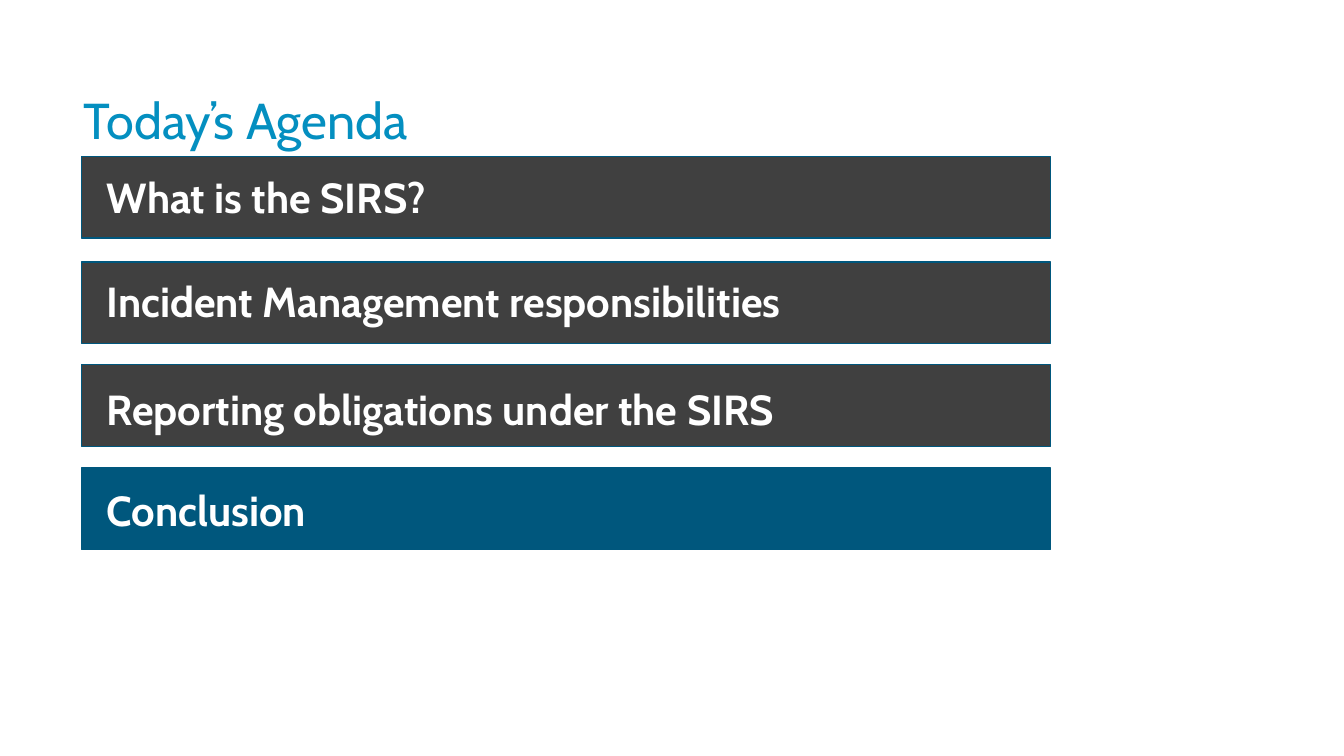
from pptx import Presentation
from pptx.dml.color import RGBColor
from pptx.enum.shapes import MSO_SHAPE
from pptx.enum.text import MSO_ANCHOR, MSO_AUTO_SIZE
from pptx.util import Cm, Pt

RECT = MSO_SHAPE.RECTANGLE
TOP, BOTTOM = MSO_ANCHOR.TOP, MSO_ANCHOR.BOTTOM
GROW = MSO_AUTO_SIZE.SHAPE_TO_FIT_TEXT

SKY = RGBColor(0x04, 0x8F, 0xC0)
NAVY = RGBColor(0x00, 0x57, 0x7D)
GRAY = RGBColor(0x40, 0x40, 0x40)
WHITE = RGBColor(0xFF, 0xFF, 0xFF)
FONT = "Cabin"

# Content: label, bar top and label top in cm, bar fill
TITLE = "Today’s Agenda"
AGENDA = [
    ("What is the SIRS?", 3.94, 4.19, GRAY),
    ("Incident Management responsibilities", 6.6, 6.83, GRAY),
    ("Reporting obligations under the SIRS", 9.19, 9.53, GRAY),
    ("Conclusion", 11.79, 12.09, NAVY),
]
BAR_X, BAR_W, BAR_H = 2.06, 24.41, 2.06
LABEL_X, LABEL_H = 2.44, 1.55

deck = Presentation()
deck.slide_width, deck.slide_height = Cm(33.87), Cm(19.05)
slide = deck.slides.add_slide(deck.slide_layouts[6])


def add_text(text, x, y, w, h, size, color, bold=False, anchor=TOP):
    box = slide.shapes.add_textbox(Cm(x), Cm(y), Cm(w), Cm(h))
    frame = box.text_frame
    frame.word_wrap = True
    frame.vertical_anchor = anchor
    line = frame.paragraphs[0]
    line.text = text
    font = line.font
    font.name, font.size, font.bold = FONT, Pt(size), bold
    font.color.rgb = color
    return frame


def add_bar(y, fill):
    bar = slide.shapes.add_shape(RECT, Cm(BAR_X), Cm(y), Cm(BAR_W), Cm(BAR_H))
    bar.shadow.inherit = False
    bar.fill.solid()
    bar.fill.fore_color.rgb = fill
    bar.line.color.rgb = NAVY
    bar.line.width = Pt(1)


# Title
head = add_text(TITLE, 2.11, 2.29, 26.9, 1.5, 36, SKY, anchor=BOTTOM)
head.margin_left = head.margin_right = head.margin_top = head.margin_bottom = 0
head.paragraphs[0].line_spacing = 0.9

# Agenda bars with their labels
for label, bar_y, label_y, fill in AGENDA:
    add_bar(bar_y, fill)
    frame = add_text(label, LABEL_X, label_y, BAR_W, LABEL_H, 30, WHITE, bold=True)
    frame.auto_size = GROW

deck.save("out.pptx")
